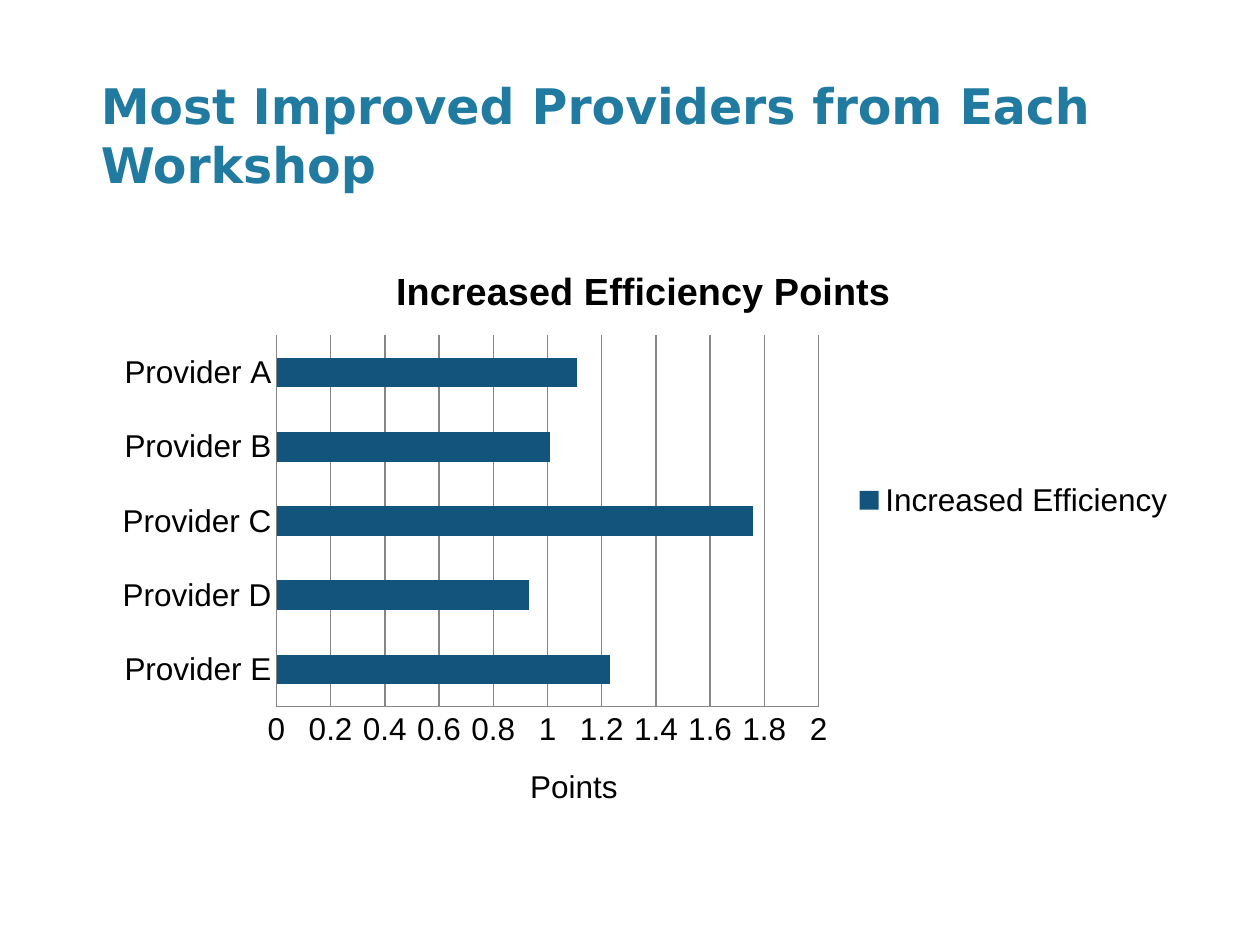
"""Build a slide with a bar chart of the most improved providers."""
from pptx import Presentation
from pptx.chart.data import CategoryChartData
from pptx.dml.color import RGBColor
from pptx.enum.chart import XL_CHART_TYPE, XL_LEGEND_POSITION, XL_TICK_MARK
from pptx.enum.text import MSO_ANCHOR, MSO_AUTO_SIZE
from pptx.util import Pt

BLACK = RGBColor(0x00, 0x00, 0x00)
TEAL = RGBColor(0x21, 0x7A, 0xA0)
NAVY = RGBColor(0x13, 0x54, 0x7D)
GRAY = RGBColor(0x86, 0x86, 0x86)

TITLE = "Most Improved Providers from Each Workshop"
HEAD = "Increased Efficiency Points "
SERIES = "Increased Efficiency "
UNIT = "Points"
SCORES = {
    "Provider E": 1.23,
    "Provider D": 0.93,
    "Provider C": 1.76,
    "Provider B": 1.01,
    "Provider A": 1.11,
}

LEFT, WIDTH = 57.6, 626.4
BODY = {"name": "Arial", "size": Pt(18), "bold": False}
TEXTS = [
    (TITLE, (LEFT, 31.7, WIDTH, 90), TEAL,
     {"name": "DejaVu Sans", "size": Pt(28), "bold": True},
     {"margin_left": 0, "vertical_anchor": MSO_ANCHOR.MIDDLE}),
    (UNIT, (295.9, 434.9, 193, 28.8), BLACK, BODY,
     {"auto_size": MSO_AUTO_SIZE.SHAPE_TO_FIT_TEXT}),
]


def apply(item, values):
    for key, value in values.items():
        setattr(item, key, value)


def style(font, values, color):
    apply(font, values)
    font.color.rgb = color


def add_text(slide, text, area, color, values, layout):
    frame = slide.shapes.add_textbox(*map(Pt, area)).text_frame
    apply(frame, {"word_wrap": True, **layout})
    frame.text = text
    style(frame.paragraphs[0].runs[0].font, values, color)


def add_bars(slide):
    data = CategoryChartData()
    data.categories = list(SCORES)
    data.add_series(SERIES, list(SCORES.values()))
    area = map(Pt, (LEFT, 139, WIDTH, 293.8))
    chart = slide.shapes.add_chart(XL_CHART_TYPE.BAR_CLUSTERED, *area, data).chart
    style(chart.font, BODY, BLACK)

    title = chart.chart_title.text_frame
    title.text = HEAD
    bold = {**BODY, "size": Pt(21.6), "bold": True}
    style(title.paragraphs[0].runs[0].font, bold, BLACK)

    chart.has_legend = True
    apply(chart.legend, {"position": XL_LEGEND_POSITION.RIGHT,
                         "include_in_layout": False})

    ticks = {"major_tick_mark": XL_TICK_MARK.NONE,
             "minor_tick_mark": XL_TICK_MARK.NONE}
    scale = {"has_major_gridlines": True, "minimum_scale": 0,
             "maximum_scale": 2, "major_unit": 0.2}
    apply(chart.category_axis, {**ticks, "has_major_gridlines": False})
    apply(chart.value_axis, {**ticks, **scale})
    apply(chart.value_axis.tick_labels, {"number_format": "General",
                                         "number_format_is_linked": False})
    for part in (chart.category_axis, chart.value_axis,
                 chart.value_axis.major_gridlines):
        part.format.line.color.rgb = GRAY
        part.format.line.width = Pt(0.75)

    plot = chart.plots[0]
    apply(plot, {"gap_width": 150, "vary_by_categories": False})
    fill = plot.series[0].format.fill
    fill.solid()
    fill.fore_color.rgb = NAVY


def main():
    deck = Presentation()
    apply(deck, {"slide_width": Pt(720), "slide_height": Pt(540)})
    slide = deck.slides.add_slide(deck.slide_layouts[6])
    add_bars(slide)
    for entry in TEXTS:
        add_text(slide, *entry)
    deck.save("out.pptx")


if __name__ == "__main__":
    main()
